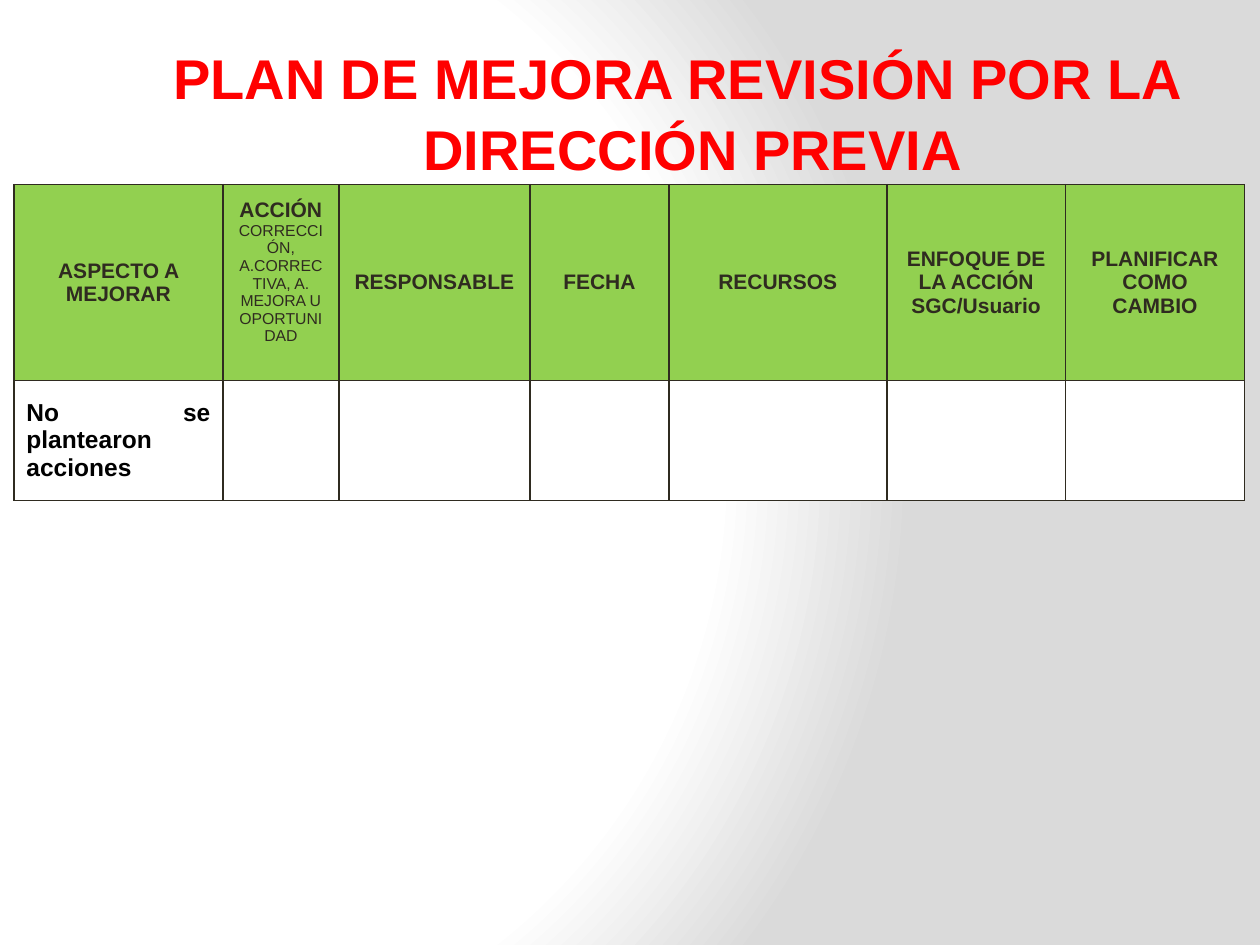
"""Build the slide with the improvement plan of the previous management review."""
from dataclasses import dataclass

import pptx
import pptx.dml.color
import pptx.enum.text
import pptx.oxml
import pptx.oxml.ns
import pptx.util

Pt = pptx.util.Pt
RGBColor = pptx.dml.color.RGBColor
Align = pptx.enum.text.PP_ALIGN
MIDDLE = pptx.enum.text.MSO_ANCHOR.MIDDLE

RED = RGBColor(0xFF, 0x00, 0x00)
GREEN = RGBColor(0x92, 0xD0, 0x50)
DARK = RGBColor(0x2F, 0x2B, 0x20)
BLACK = RGBColor(0x00, 0x00, 0x00)
WHITE = RGBColor(0xFF, 0xFF, 0xFF)
LIGHT_GREY = RGBColor(0xDA, 0xDA, 0xDA)

TITLE_FONT = {"size": Pt(32), "bold": True}
HEADING_FONT = {"size": Pt(12), "bold": True}
DETAIL_FONT = {"size": Pt(9), "bold": False}
ASPECT_FONT = {"size": Pt(14), "bold": True}


@dataclass(frozen=True)
class Line:
    """One paragraph of text with its format."""
    text: str
    font: dict
    color: RGBColor = DARK
    align: Align = Align.CENTER


@dataclass(frozen=True)
class Column:
    """One table column: width in points, heading lines and bottom margin."""
    width: float
    heading: tuple
    entry: tuple = ()
    bottom: float = 3.6


def heading(*texts: str) -> tuple:
    """Return bold heading lines."""
    return tuple(Line(text, HEADING_FONT) for text in texts)


COLUMNS = (
    Column(119.5, heading("ASPECTO A MEJORAR"),
           (Line("No se plantearon acciones", ASPECT_FONT, BLACK, Align.JUSTIFY),)),
    Column(66.2, heading("ACCIÓN")
           + (Line("CORRECCIÓN, A.CORRECTIVA, A. MEJORA U OPORTUNIDAD", DETAIL_FONT),), bottom=16),
    Column(109.4, heading("RESPONSABLE")),
    Column(79.2, heading("FECHA")),
    Column(124.6, heading("RECURSOS")),
    Column(102.2, heading("ENFOQUE DE LA ACCIÓN", "SGC/Usuario")),
    Column(102.2, heading("PLANIFICAR COMO CAMBIO")),
)
ROW_HEIGHTS = (112, 68.4)


def write(frame, lines: tuple) -> None:
    """Write one paragraph for each line."""
    for index, line in enumerate(lines):
        paragraph = frame.add_paragraph() if index else frame.paragraphs[0]
        paragraph.alignment = line.align
        run = paragraph.add_run()
        run.text = line.text
        run.font.name = "Arial"
        run.font.color.rgb = line.color
        for name, value in line.font.items():
            setattr(run.font, name, value)


def paint_background(slide) -> None:
    """Fill the background with a circular gradient from white to grey."""
    stops = "".join(
        f'<a:gs pos="{percent * 1000}"><a:srgbClr val="{color}"/></a:gs>'
        for percent, color in ((0, WHITE), (75, WHITE), (100, LIGHT_GREY)))
    slide.element.cSld.insert(0, pptx.oxml.parse_xml(
        f'<p:bg {pptx.oxml.ns.nsdecls("p", "a")}><p:bgPr><a:gradFill rotWithShape="1">'
        f'<a:gsLst>{stops}</a:gsLst><a:path path="circle">'
        '<a:fillToRect l="20000" t="50000" r="100000" b="50000"/></a:path>'
        '</a:gradFill><a:effectLst/></p:bgPr></p:bg>'))


def add_title(slide) -> None:
    """Add the centred title with a hanging indent."""
    title = slide.shapes.add_textbox(Pt(51.1), Pt(20.9), Pt(671.8), Pt(85)).text_frame
    title.word_wrap = True
    title.vertical_anchor = MIDDLE
    write(title, (Line("PLAN DE MEJORA REVISIÓN POR LA DIRECCIÓN PREVIA", TITLE_FONT, RED),))
    title.paragraphs[0].line_spacing = 1.05
    indents = title.paragraphs[0]._p.get_or_add_pPr()
    indents.set("marL", str(Pt(18)))
    indents.set("indent", str(Pt(-18)))


def style_cell(cell, fill: RGBColor, lines: tuple, bottom: float) -> None:
    """Give a cell its borders, fill and text."""
    properties = cell._tc.get_or_add_tcPr()
    for side in ("lnL", "lnR", "lnT", "lnB"):
        properties.append(pptx.oxml.parse_xml(
            f'<a:{side} {pptx.oxml.ns.nsdecls("a")} w="{Pt(1)}"><a:solidFill>'
            f'<a:srgbClr val="{DARK}"/></a:solidFill></a:{side}>'))
    cell.fill.solid()
    cell.fill.fore_color.rgb = fill
    cell.vertical_anchor = MIDDLE
    cell.margin_bottom = Pt(bottom)
    write(cell.text_frame, lines)


def add_plan(slide) -> None:
    """Add the table of improvement actions."""
    width = sum(column.width for column in COLUMNS)
    plan = slide.shapes.add_table(len(ROW_HEIGHTS), len(COLUMNS), Pt(7.9), Pt(105.5),
                                  Pt(width), Pt(sum(ROW_HEIGHTS))).table
    for row, height in zip(plan.rows, ROW_HEIGHTS):
        row.height = Pt(height)
    for index, column in enumerate(COLUMNS):
        plan.columns[index].width = Pt(column.width)
        style_cell(plan.cell(0, index), GREEN, column.heading, column.bottom)
        style_cell(plan.cell(1, index), WHITE, column.entry, 3.6)


def main() -> None:
    """Build and save the slide."""
    presentation = pptx.Presentation()
    presentation.slide_width = Pt(720)
    presentation.slide_height = Pt(540)
    slide = presentation.slides.add_slide(presentation.slide_layouts[6])
    paint_background(slide)
    add_title(slide)
    add_plan(slide)
    presentation.save("out.pptx")


if __name__ == "__main__":
    main()
